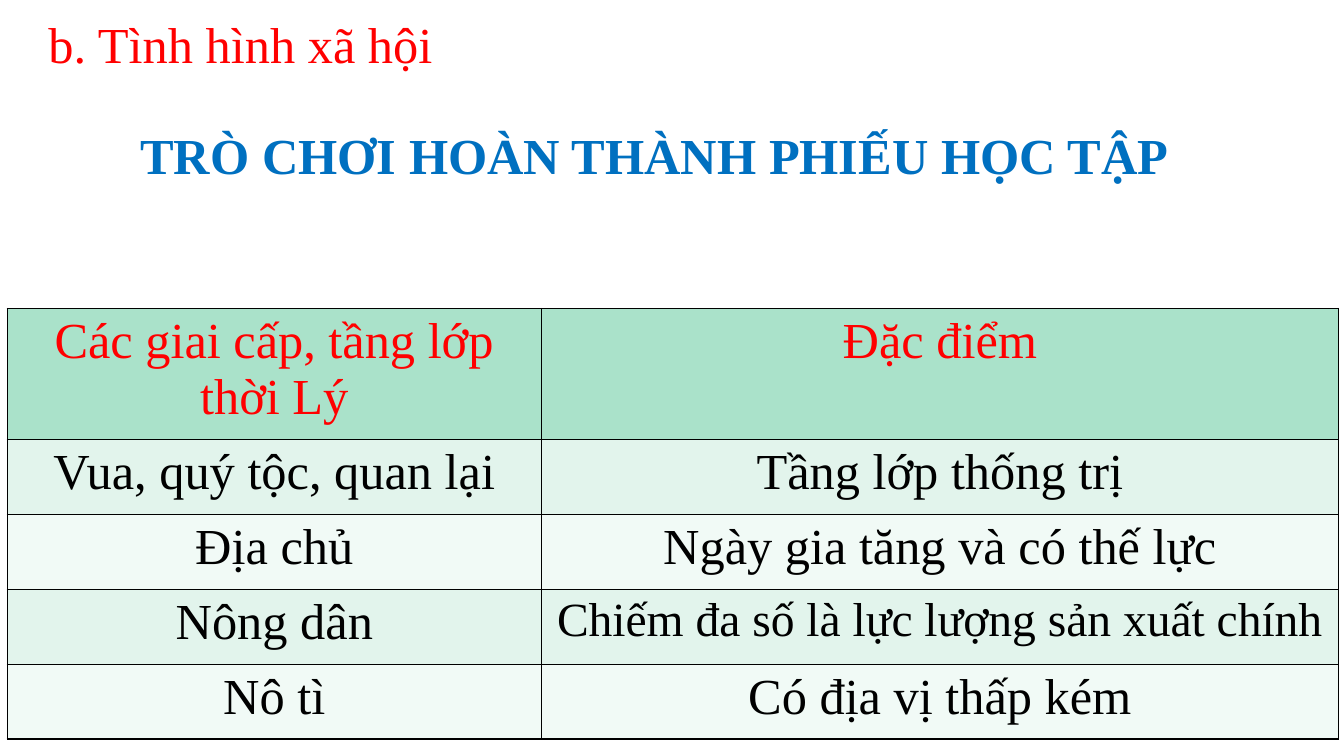
from lxml.etree import SubElement
from pptx import Presentation
from pptx.dml.color import RGBColor
from pptx.enum.text import MSO_ANCHOR, MSO_AUTO_SIZE, PP_ALIGN
from pptx.oxml.ns import qn
from pptx.util import Pt

RED = RGBColor(0xFF, 0x00, 0x00)
BLUE = RGBColor(0x00, 0x70, 0xC0)
BLACK = RGBColor(0x00, 0x00, 0x00)
HEADER_GREEN = RGBColor(0xAA, 0xE2, 0xCA)
BAND_GREENS = [RGBColor(0xF1, 0xFA, 0xF6), RGBColor(0xE2, 0xF4, 0xEC)]
FONT = "Times New Roman"


def write(text_frame, text, color, size=36, bold=False, align=PP_ALIGN.CENTER):
    text_frame.text = text
    paragraph = text_frame.paragraphs[0]
    paragraph.alignment = align
    font = paragraph.runs[0].font
    font.name = FONT
    font.size = Pt(size)
    font.bold = bold
    font.color.rgb = color


def add_borders(cell):
    properties = cell._tc.get_or_add_tcPr()
    for position, side in enumerate(("a:lnL", "a:lnR", "a:lnT", "a:lnB")):
        line = properties.makeelement(qn(side), {"w": str(Pt(1))})
        fill = SubElement(line, qn("a:solidFill"))
        SubElement(fill, qn("a:srgbClr"), val=str(BLACK))
        properties.insert(position, line)


presentation = Presentation()
presentation.slide_width = Pt(960)
presentation.slide_height = Pt(540)
slide = presentation.slides.add_slide(presentation.slide_layouts[5])

title = slide.shapes.title
title.left, title.top, title.width, title.height = Pt(27.4), Pt(5.8), Pt(294.5), Pt(51)
title.text_frame.vertical_anchor = MSO_ANCHOR.TOP
title.text_frame.auto_size = MSO_AUTO_SIZE.NONE
write(title.text_frame, "b. Tình hình xã hội", RED, align=PP_ALIGN.LEFT)

game_heading = slide.shapes.add_textbox(Pt(89.3), Pt(85), Pt(756.7), Pt(51))
game_heading.text_frame.word_wrap = False
write(game_heading.text_frame, "TRÒ CHƠI HOÀN THÀNH PHIẾU HỌC TẬP", BLUE, bold=True)

rows = [
    ("Các giai cấp, tầng lớp thời Lý", "Đặc điểm"),
    ("Vua, quý tộc, quan lại", "Tầng lớp thống trị"),
    ("Địa chủ", "Ngày gia tăng và có thế lực"),
    ("Nông dân", "Chiếm đa số là lực lượng sản xuất chính"),
    ("Nô tì", "Có địa vị thấp kém"),
]
frame = slide.shapes.add_table(len(rows), 2, Pt(5.2), Pt(220.3), Pt(951), Pt(307.6))
table = frame.table
table.columns[0].width = Pt(381.5)
table.columns[1].width = Pt(569.5)
for row_index, texts in enumerate(rows):
    is_header = row_index == 0
    table.rows[row_index].height = Pt(93.6 if is_header else 53.5)
    for column_index, text in enumerate(texts):
        cell = table.cell(row_index, column_index)
        cell.fill.solid()
        cell.fill.fore_color.rgb = HEADER_GREEN if is_header else BAND_GREENS[row_index % 2]
        size = 34 if text.startswith("Chiếm") else 36
        write(cell.text_frame, text, RED if is_header else BLACK, size)
        add_borders(cell)

presentation.save("out.pptx")
